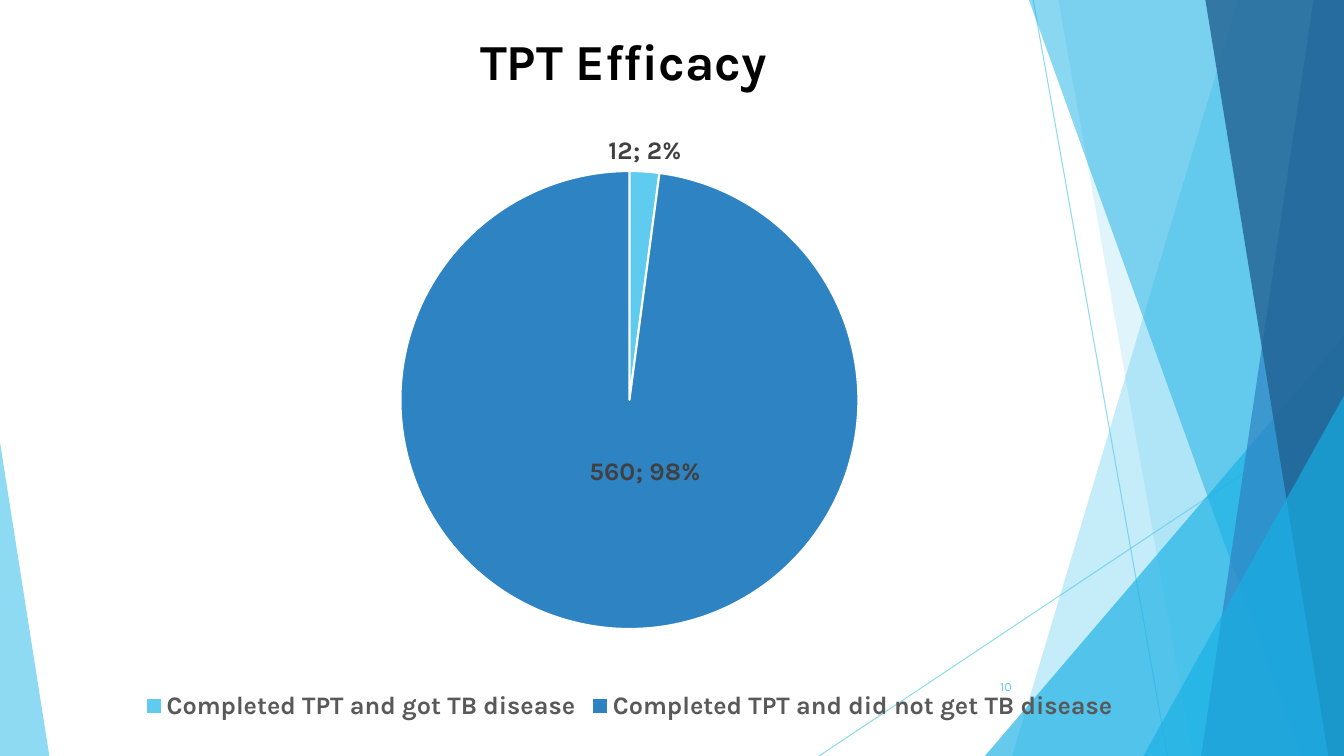
from dataclasses import dataclass

from lxml.etree import SubElement
from pptx import Presentation
from pptx.chart.data import CategoryChartData
from pptx.dml.color import RGBColor
from pptx.enum.chart import XL_CHART_TYPE, XL_LABEL_POSITION, XL_LEGEND_POSITION
from pptx.enum.shapes import MSO_CONNECTOR, MSO_SHAPE
from pptx.enum.text import MSO_ANCHOR, MSO_AUTO_SIZE, PP_ALIGN
from pptx.oxml import parse_xml
from pptx.oxml.ns import nsdecls, qn
from pptx.util import Emu, Pt

PX = 9525
W, H = 1280, 720


@dataclass(frozen=True)
class Theme:
    font: str = "Karla"
    sky: str = "5FCBEF"
    cyan: str = "17B0E4"
    blue: str = "2E83C3"
    navy: str = "226292"
    white: str = "FFFFFF"
    title: str = "000000"
    label: str = "404040"
    legend: str = "595959"
    title_size: int = 36
    chart_size: int = 18
    number_size: int = 9


T = Theme()


def px(*lengths):
    return [Emu(n * PX) for n in lengths]


def set_font(font, size, color, bold=False):
    font.name, font.size, font.bold = T.font, Pt(size), bold
    font.color.rgb = RGBColor.from_string(color)


def set_alpha(shape, percent):
    """Make every colour already set on the shape translucent."""
    for color in shape.element.spPr.iter(qn("a:srgbClr")):
        SubElement(color, qn("a:alpha"), val=str(percent * 1000))


def paint(shape, color, opacity):
    shape.shadow.inherit = False
    shape.fill.solid()
    shape.fill.fore_color.rgb = RGBColor.from_string(color)
    shape.line.fill.background()
    set_alpha(shape, opacity)


def add_ray(s, start, end):
    ray = s.shapes.add_connector(MSO_CONNECTOR.STRAIGHT, *px(*start, *end))
    ray.line.color.rgb = RGBColor.from_string(T.sky)
    ray.line.width = Pt(0.75)
    set_alpha(ray, 70)
    SubElement(ray.element.spPr, qn("a:effectLst"))


def add_band(s, top_x, bottom_x, color, opacity):
    """Fill from a slanted left edge to the right edge of the slide."""
    outline = s.shapes.build_freeform(top_x, 0, scale=PX)
    outline.add_line_segments([(W, 0), (W, H), (bottom_x, H)], close=True)
    paint(outline.convert_to_shape(), color, opacity)


def add_corner(s, x, y, width, apex, color, opacity):
    """Triangle standing on the bottom edge of the slide."""
    corner = s.shapes.add_shape(MSO_SHAPE.ISOSCELES_TRIANGLE, *px(x, y, width, H - y))
    corner.adjustments[0] = apex
    paint(corner, color, opacity)


def add_backdrop(s):
    add_ray(s, (984, 0), (1112, H))
    add_ray(s, (W, 387), (780, H))
    add_band(s, 1179, 964, T.sky, 36)
    add_band(s, 1008, 1136, T.sky, 20)
    add_corner(s, 938, 320, W - 938, 1, T.cyan, 66)
    add_band(s, 980, 1239, T.cyan, 50)
    add_band(s, 1251, 1144, T.blue, 70)
    add_band(s, 1148, 1265, T.navy, 80)
    add_corner(s, 1089, 377, W - 1089, 1, T.cyan, 66)
    add_corner(s, 0, 421, 47, 0, T.sky, 70)


def add_title(s, box, text):
    title = s.shapes.title
    s.shapes.element.append(title.element)  # bring in front of the backdrop
    title.left, title.top, title.width, title.height = px(*box)
    tf = title.text_frame
    tf.auto_size = MSO_AUTO_SIZE.NONE
    tf.vertical_anchor = MSO_ANCHOR.MIDDLE
    p = tf.paragraphs[0]
    p.alignment = PP_ALIGN.CENTER
    r = p.add_run()
    r.text = text
    set_font(r.font, T.title_size, T.title, True)


def manual_layout(inner="", **lengths):
    values = "".join(f'<c:{k} val="{v}"/>' for k, v in lengths.items())
    return parse_xml(f'<c:layout {nsdecls("c")}><c:manualLayout>{inner}{values}'
                     "</c:manualLayout></c:layout>")


def add_separator(labels):
    separator = parse_xml(f'<c:separator {nsdecls("c")}>; </c:separator>')
    labels.find(qn("c:showBubbleSize")).addnext(separator)


def format_labels(plot):
    plot.has_data_labels = True
    labels = plot.data_labels
    labels.show_value = labels.show_percentage = True
    labels.position = XL_LABEL_POSITION.BEST_FIT
    set_font(labels.font, T.chart_size, T.label, True)
    shared = plot.series[0].data_labels
    shared.show_value = shared.show_percentage = True
    shared.position = XL_LABEL_POSITION.BEST_FIT
    set_font(shared.font, T.chart_size, T.label, True)

    large = plot.series[0].points[1].data_label
    large.position = XL_LABEL_POSITION.CENTER
    set_font(large.font, T.chart_size, T.label, True)
    point = shared._element.find(qn("c:dLbl"))
    point.find(qn("c:showPercent")).set("val", "1")
    point.find(qn("c:idx")).addnext(manual_layout(x=0.02, y=-0.07))
    for element in (labels._element, shared._element, point):
        add_separator(element)


def add_efficacy_pie(s, box):
    data = CategoryChartData()
    data.categories = ["Completed TPT and got TB disease",
                       "Completed TPT and did not get TB disease"]
    data.add_series("Series 1", (12, 560))
    chart = s.shapes.add_chart(XL_CHART_TYPE.PIE, *px(*box), data).chart
    chart.has_title = False
    set_font(chart.font, 10, T.title)
    chart.has_legend = True
    chart.legend.position = XL_LEGEND_POSITION.BOTTOM
    chart.legend.include_in_layout = False
    set_font(chart.legend.font, T.chart_size, T.legend, True)

    plot = chart.plots[0]
    plot.vary_by_categories = True
    for i, color in enumerate((T.sky, T.blue)):
        slice_format = plot.series[0].points[i].format
        slice_format.fill.solid()
        slice_format.fill.fore_color.rgb = RGBColor.from_string(color)
        slice_format.line.color.rgb = RGBColor.from_string(T.white)
        slice_format.line.width = Pt(1.5)
    format_labels(plot)

    area = chart.element.find(".//" + qn("c:plotArea"))
    for layout in area.findall(qn("c:layout")):
        area.remove(layout)
    inner = ('<c:layoutTarget val="inner"/><c:xMode val="edge"/>'
             '<c:yMode val="edge"/>')
    area.insert(0, manual_layout(inner, x=0.3, y=0.08, w=0.4, h=0.76))


def add_slide_number(s, box, text):
    tf = s.shapes.add_textbox(*px(*box)).text_frame
    tf.word_wrap = True
    tf.vertical_anchor = MSO_ANCHOR.MIDDLE
    p = tf.paragraphs[0]
    p.alignment = PP_ALIGN.RIGHT
    r = p.add_run()
    r.text = text
    set_font(r.font, T.number_size, T.sky)


def main():
    prs = Presentation()
    prs.slide_width, prs.slide_height = px(W, H)
    s = prs.slides.add_slide(prs.slide_layouts[5])
    add_backdrop(s)
    add_title(s, (80, 22, 1040, 71), "TPT Efficacy ")
    add_efficacy_pie(s, (49, 117, 1101, 574))
    add_slide_number(s, (901, 635, 72, 38), "10")
    prs.save("out.pptx")


if __name__ == "__main__":
    main()
